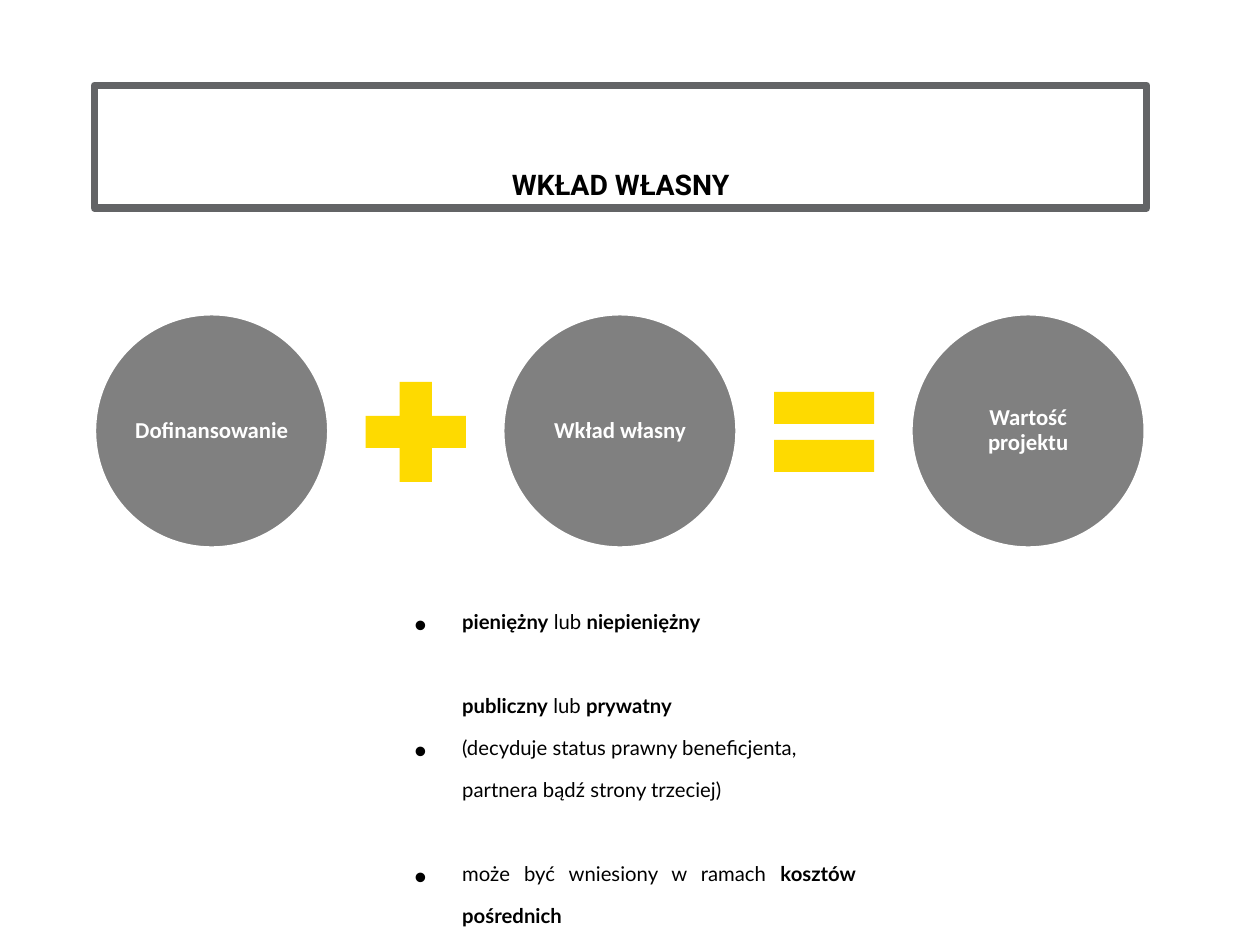
from lxml import etree
from pptx import Presentation
from pptx import util as u
from pptx.dml.color import RGBColor
from pptx.enum import shapes, text
from pptx.oxml.ns import qn

BLACK = RGBColor(0x00, 0x00, 0x00)
WHITE = RGBColor(0xFF, 0xFF, 0xFF)
FRAME = RGBColor(0x63, 0x64, 0x66)
GRAY = RGBColor(0x80, 0x80, 0x80)
YELLOW = RGBColor(0xFE, 0xDA, 0x00)

TITLE = {"name": "Roboto", "size": u.Pt(28), "bold": True}
BODY = {"name": "Lato", "size": u.Pt(20), "bold": False}
LABEL = {"name": "Calibri", "size": u.Pt(13), "bold": True}


class Deck:
    """Holds the style and the current slide; lengths are percent of its size."""

    def __init__(self):
        self.prs = Presentation()
        self.prs.slide_width, self.prs.slide_height = u.Inches(10), u.Inches(7.5)
        self.s = self.prs.slides.add_slide(self.prs.slide_layouts[6])

    def box(self, x, y, w, h):
        pw, ph = self.prs.slide_width, self.prs.slide_height
        return [round(v * side / 100) for v, side in zip((x, y, w, h), (pw, ph, pw, ph))]

    def shape(self, kind, at, fill=None, line=None, width=0):
        sp = self.s.shapes.add_shape(kind, *self.box(*at))
        sp.shadow.inherit = False
        for part, color in ((sp.fill, fill), (sp.line.fill, line)):
            if color is None:
                part.background()
            else:
                part.solid()
                part.fore_color.rgb = color
        if line is not None:
            sp.line.width = u.Pt(width)
        return sp

    def frame(self, sp, **values):
        tf = sp.text_frame
        for name, value in {"word_wrap": True, **values}.items():
            setattr(tf, name, value)
        return tf

    def run(self, p, words, style, color, raised=False):
        r = p.add_run()
        r.text = words
        for name, value in style.items():
            setattr(r.font, name, value)
        r.font.color.rgb = color
        if raised:
            r.font._element.set("baseline", "30000")

    def title(self, words, at):
        sp = self.shape(shapes.MSO_SHAPE.RECTANGLE, at, line=FRAME, width=4.5)
        tf = self.frame(sp, vertical_anchor=text.MSO_ANCHOR.TOP,
                        margin_top=u.Inches(0.6), margin_bottom=0)
        p = tf.paragraphs[0]
        p.alignment = text.PP_ALIGN.CENTER
        self.run(p, words, TITLE, BLACK, raised=True)

    def circle(self, words, at):
        sp = self.shape(shapes.MSO_SHAPE.OVAL, at, GRAY, WHITE, 2)
        sides = ("left", "top", "right", "bottom")
        tf = self.frame(sp, vertical_anchor=text.MSO_ANCHOR.MIDDLE,
                        **{f"margin_{side}": u.Inches(0.02) for side in sides})
        p = tf.paragraphs[0]
        p.alignment, p.line_spacing = text.PP_ALIGN.CENTER, 0.9
        self.run(p, words, LABEL, WHITE)

    def bullets(self, items, at):
        tf = self.frame(self.s.shapes.add_textbox(*self.box(*at)))
        for i, (bullet, before, align, runs) in enumerate(items):
            p = tf.add_paragraph() if i else tf.paragraphs[0]
            p.alignment = align
            if before:
                p.space_before = u.Pt(before)
            ppr = p._p.get_or_add_pPr()
            indent = u.Inches(0.38)
            ppr.set("marL", str(indent))
            ppr.set("indent", str(-indent if bullet else 0))
            if bullet:
                etree.SubElement(ppr, qn("a:buFont"), typeface="Arial")
                etree.SubElement(ppr, qn("a:buChar"), char="•")
            for words, bold in runs:
                self.run(p, words, {**BODY, "bold": bold}, BLACK, raised=True)


def main():
    deck = Deck()
    deck.title("WKŁAD WŁASNY", (7.5, 9.05, 83.5, 12.95))

    left, justify = text.PP_ALIGN.LEFT, text.PP_ALIGN.JUSTIFY
    deck.bullets([
        (True, 0, left, [("pieniężny", True), (" lub ", False), ("niepieniężny", True)]),
        (False, 24, left, [("publiczny", True), (" lub ", False), ("prywatny", True)]),
        (True, 0, left, [("(decyduje status prawny beneficjenta, "
                          "partnera bądź strony trzeciej)", False)]),
        (True, 24, justify, [("może być wniesiony w ramach ", False),
                             ("kosztów pośrednich", True)]),
    ], (31.9, 63.33, 37, 25.33))

    start, pitch, sign_offset = 7.5, 32.4, 20.1
    for i, words in enumerate(("Dofinansowanie", "Wkład własny", "Wartość projektu")):
        deck.circle(words, (start + i * pitch, 33.2, 18.6, 24.8))
    for i, kind in enumerate((shapes.MSO_SHAPE.MATH_PLUS, shapes.MSO_SHAPE.MATH_EQUAL)):
        deck.shape(kind, (start + sign_offset + i * pitch, 38.5, 10.8, 14.4), YELLOW)

    deck.prs.save("out.pptx")


if __name__ == "__main__":
    main()
